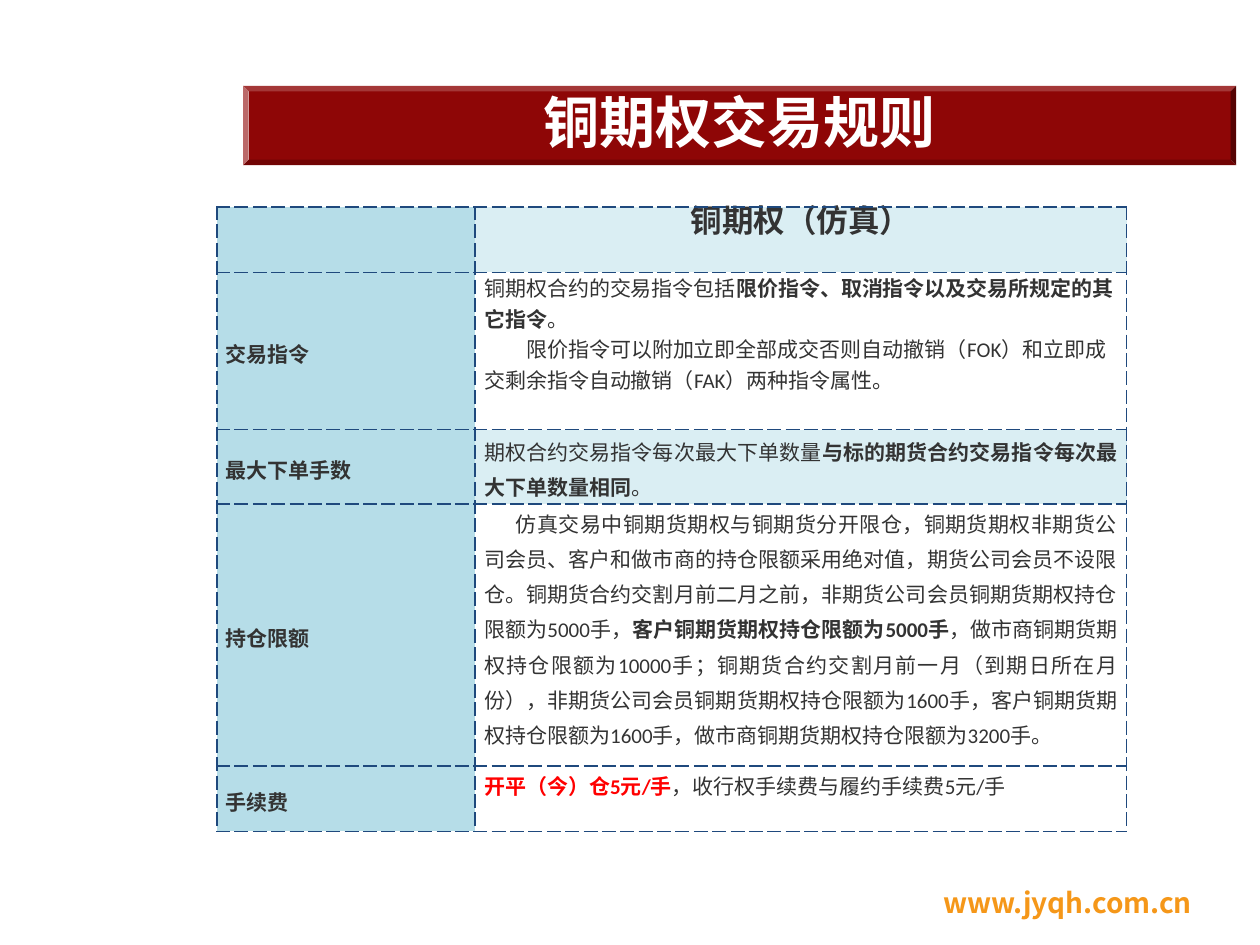
import dataclasses
import typing

import pptx
import pptx.dml.color
import pptx.enum.shapes
import pptx.enum.text
import pptx.oxml
import pptx.oxml.ns
import pptx.util

Cm = pptx.util.Cm
Pt = pptx.util.Pt
Align = pptx.enum.text.PP_ALIGN
Anchor = pptx.enum.text.MSO_ANCHOR


@dataclasses.dataclass(frozen=True)
class Theme:
    ink: str = "333333"
    white: str = "FFFFFF"
    banner: str = "8E0606"
    site: str = "F59719"
    alert: str = "FF0000"
    border: str = "1F497D"
    side: str = "B6DDE8"
    band: str = "DAEEF3"
    body: str = "Calibri"
    head: str = "DejaVu Sans"
    web: str = "Noto Sans CJK SC"
    title: int = 32
    top: int = 18
    link: int = 16
    text: int = 12
    lead: int = 20


THEME = Theme()


@dataclasses.dataclass(frozen=True)
class Run:
    text: str
    bold: bool = False
    color: str = THEME.ink
    size: int = THEME.text
    font: str = THEME.body


@dataclasses.dataclass(frozen=True)
class Para:
    runs: tuple[Run, ...]
    align: typing.Any = Align.JUSTIFY
    lead: int | None = THEME.lead
    indent: int = 0


@dataclasses.dataclass(frozen=True)
class Row:
    height: float
    label: str
    paras: tuple[Para, ...]
    fill: str = THEME.white
    anchor: typing.Any = Anchor.TOP


ROWS = (
    Row(1.32, "", (
        Para((Run("铜期权（仿真）", True, size=THEME.top),), Align.CENTER),
    ), THEME.band),
    Row(3.17, "交易指令", (
        Para((
            Run("铜期权合约的交易指令包括"),
            Run("限价指令、取消指令以及交易所规定的其它指令", True),
            Run("。"),
        ), Align.LEFT, None),
        Para((
            Run("限价指令可以附加立即全部成交否则自动撤销（FOK）和立即"
                "成交剩余指令自动撤销（FAK）两种指令属性。"),
        ), Align.LEFT, None, 24),
    )),
    Row(1.5, "最大下单手数", (
        Para((
            Run("期权合约交易指令每次最大下单数量"),
            Run("与标的期货合约交易指令每次最大下单数量相同", True),
            Run("。"),
        )),
    ), THEME.band, Anchor.MIDDLE),
    Row(5.28, "持仓限额", (
        Para((
            Run("仿真交易中铜期货期权与铜期货分开限仓，铜期货期权非期货公司会员、"
                "客户和做市商的持仓限额采用绝对值，期货公司会员不设限仓。"
                "铜期货合约交割月前二月之前，非期货公司会员铜期货期权持仓限额为5000手，"),
            Run("客户铜期货期权持仓限额为5000手", True),
            Run("，做市商铜期货期权持仓限额为10000手；铜期货合约交割月前一月"
                "（到期日所在月份），非期货公司会员铜期货期权持仓限额为1600手，"
                "客户铜期货期权持仓限额为1600手，做市商铜期货期权持仓限额为3200手。"),
        ), indent=18),
    )),
    Row(1.32, "手续费", (
        Para((
            Run("开平（今）仓5元/手", True, THEME.alert),
            Run("，收行权手续费与履约手续费5元/手"),
        )),
    )),
)


def rgb(code: str) -> pptx.dml.color.RGBColor:
    return pptx.dml.color.RGBColor.from_string(code)


def write(frame, paras: typing.Sequence[Para]) -> None:
    for i, para in enumerate(paras):
        line = frame.add_paragraph() if i else frame.paragraphs[0]
        line.alignment = para.align
        if para.lead:
            line.line_spacing = Pt(para.lead)
        if para.indent:
            props = line._p.get_or_add_pPr()
            props.set("marL", "0")
            props.set("indent", str(Pt(para.indent)))
        for item in para.runs:
            run = line.add_run()
            run.text = item.text
            font = run.font
            font.name, font.size, font.bold = item.font, Pt(item.size), item.bold
            font.color.rgb = rgb(item.color)


def add_text(slide, box: tuple[float, ...], para: Para, anchor) -> None:
    frame = slide.shapes.add_textbox(*map(Cm, box)).text_frame
    frame.word_wrap = True
    frame.vertical_anchor = anchor
    write(frame, [para])


def add_banner(slide) -> None:
    bar = slide.shapes.add_shape(
        pptx.enum.shapes.MSO_SHAPE.BEVEL, Cm(4.9), Cm(1.73), Cm(20.02), Cm(1.6))
    bar.adjustments[0] = 0.07
    bar.shadow.inherit = False
    bar.fill.solid()
    bar.fill.fore_color.rgb = rgb(THEME.banner)
    bar.line.fill.background()


def style(cell, fill: str, anchor) -> None:
    """Set the margins, dashed borders and fill of a table cell."""
    cell.margin_left = cell.margin_right = Cm(0.18)
    cell.margin_top = cell.margin_bottom = 0
    cell.vertical_anchor = anchor
    props = cell._tc.get_or_add_tcPr()
    for side in "LRTB":
        props.append(pptx.oxml.parse_xml(
            f'<a:ln{side} {pptx.oxml.ns.nsdecls("a")} w="{Pt(1)}"><a:solidFill>'
            f'<a:srgbClr val="{THEME.border}"/></a:solidFill>'
            f'<a:prstDash val="dash"/></a:ln{side}>'))
    cell.fill.solid()
    cell.fill.fore_color.rgb = rgb(fill)


def add_rules(slide) -> None:
    widths = (5.21, 13.13)
    table = slide.shapes.add_table(
        len(ROWS), len(widths), Cm(4.37), Cm(4.17),
        Cm(sum(widths)), Cm(sum(row.height for row in ROWS))).table
    table.first_row = table.horz_banding = False
    for col, width in zip(table.columns, widths):
        col.width = Cm(width)
    for i, row in enumerate(ROWS):
        table.rows[i].height = Cm(row.height)
        label, rule = table.cell(i, 0), table.cell(i, 1)
        style(label, THEME.side, Anchor.MIDDLE)
        style(rule, row.fill, row.anchor)
        if row.label:
            write(label.text_frame, [Para((Run(row.label, True),))])
        write(rule.text_frame, row.paras)


def main() -> None:
    deck = pptx.Presentation()
    deck.slide_width, deck.slide_height = Cm(25.4), Cm(19.05)
    slide = deck.slides.add_slide(deck.slide_layouts[6])
    add_banner(slide)
    title = Run("铜期权交易规则", True, THEME.white, THEME.title, THEME.head)
    add_text(slide, (5.31, 1.6, 19.2, 1.7),
             Para((title,), Align.CENTER, None), Anchor.MIDDLE)
    site = Run("www.jyqh.com.cn", True, THEME.site, THEME.link, THEME.web)
    add_text(slide, (17.3, 17.73, 6.98, 0.99),
             Para((site,), Align.RIGHT, None), Anchor.TOP)
    add_rules(slide)
    deck.save("out.pptx")


if __name__ == "__main__":
    main()
